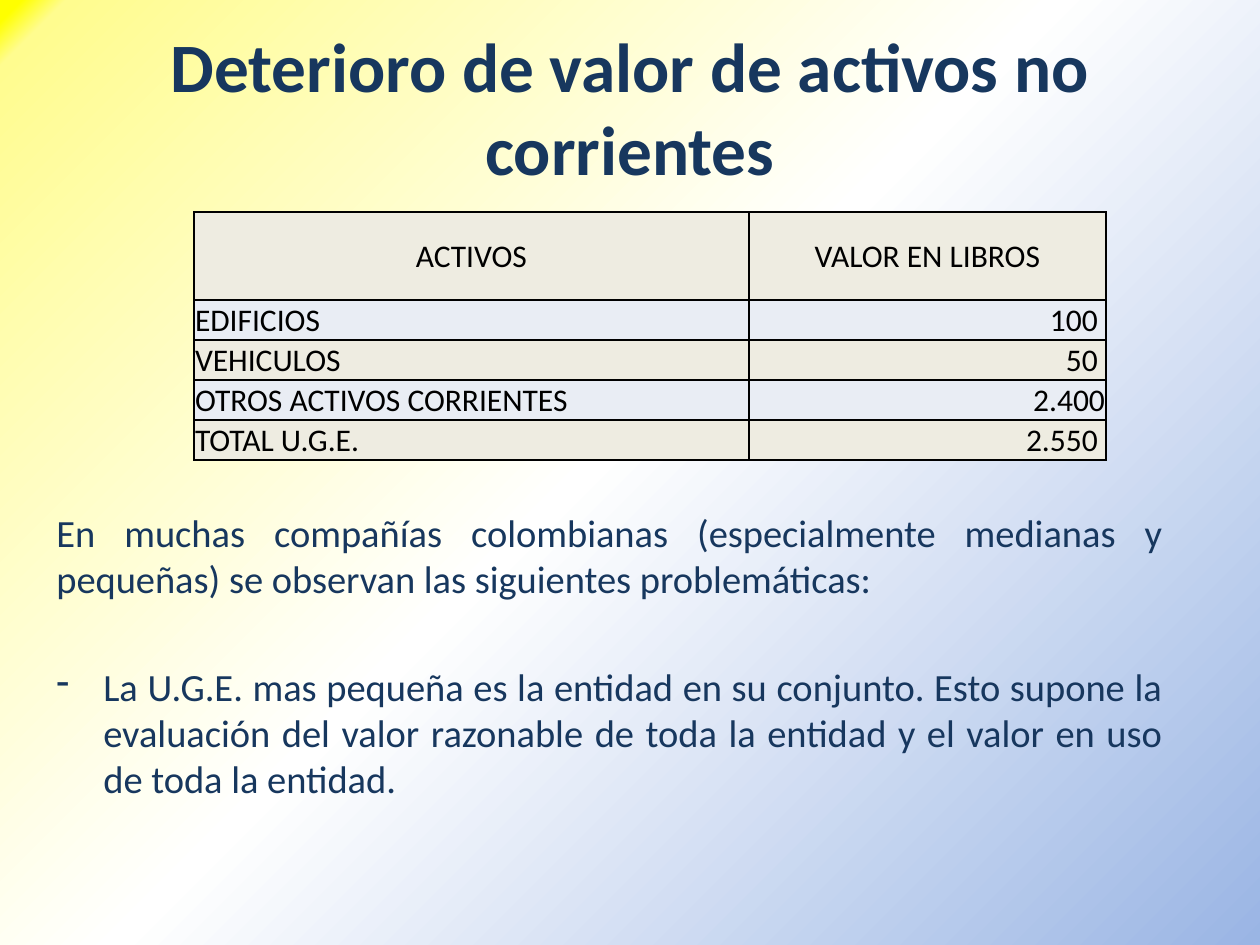
"""Build a slide on impairment of non-current assets: title, book value table and remarks."""
from pptx import Presentation
from pptx.dml.color import RGBColor
from pptx.enum.text import MSO_ANCHOR, PP_ALIGN
from pptx.oxml import parse_xml
from pptx.oxml.ns import nsdecls, qn
from pptx.util import Pt

LEFT, CENTER, RIGHT, JUSTIFY = PP_ALIGN.LEFT, PP_ALIGN.CENTER, PP_ALIGN.RIGHT, PP_ALIGN.JUSTIFY
MIDDLE, BOTTOM = MSO_ANCHOR.MIDDLE, MSO_ANCHOR.BOTTOM
NAVY = RGBColor(0x17, 0x37, 0x5E)
BLACK = RGBColor(0, 0, 0)
SAND = RGBColor(0xEE, 0xEC, 0xE1)
MIST = RGBColor(0xE9, 0xED, 0xF4)
YELLOW = RGBColor(0xFF, 0xFF, 0x00)
CREAM = RGBColor(0xFF, 0xFC, 0x8F)
WHITE = RGBColor(0xFF, 0xFF, 0xFF)
SKY = RGBColor(0x9A, 0xB5, 0xE4)
FONT = "Calibri"


def px(length):
    return round(length * 914400 / 126)


def style(paragraph, size, color, align, bold=False):
    paragraph.alignment = align
    font = paragraph.font
    font.name, font.size, font.bold = FONT, Pt(size), bold
    font.color.rgb = color


prs = Presentation()
prs.slide_width, prs.slide_height = px(1260), px(945)
slide = prs.slides.add_slide(prs.slide_layouts[6])

backdrop = slide.background.fill
backdrop.gradient()
backdrop.gradient_angle = 315
stops = next(slide.element.iter(qn("a:gsLst")))
for stop in list(stops):
    stops.remove(stop)
for percent, color in ((1, YELLOW), (3, CREAM), (48, WHITE), (100, SKY)):
    stops.append(parse_xml(
        f'<a:gs {nsdecls("a")} pos="{percent * 1000}"><a:srgbClr val="{color}"/></a:gs>'))

title = slide.shapes.add_textbox(px(63), px(28), px(1134), px(157)).text_frame
title.word_wrap = True
title.vertical_anchor = MIDDLE
title.text = "Deterioro de valor de activos no corrientes"
style(title.paragraphs[0], 39.6, NAVY, CENTER, bold=True)

assets = (
    ("ACTIVOS", "VALOR EN LIBROS"),
    ("EDIFICIOS", " 100 "),
    ("VEHICULOS", " 50 "),
    ("OTROS ACTIVOS CORRIENTES", "2.400"),
    ("TOTAL U.G.E.", " 2.550 "),
)
book_values = slide.shapes.add_table(
    len(assets), 2, px(194), px(212), px(912), px(248)).table
for column, width in zip(book_values.columns, (555, 357)):
    column.width = px(width)
for r, entries in enumerate(assets):
    header = r == 0
    book_values.rows[r].height = px(88 if header else 40)
    for c, entry in enumerate(entries):
        cell = book_values.cell(r, c)
        cell.text = entry
        cell.margin_left = cell.margin_right = cell.margin_top = px(1)
        cell.margin_bottom = 0
        cell.vertical_anchor = MIDDLE if header else BOTTOM
        style(cell.text_frame.paragraphs[0], 18, BLACK, CENTER if header else (LEFT, RIGHT)[c])
        properties = cell._tc.get_or_add_tcPr()
        for side in ("lnL", "lnR", "lnT", "lnB"):
            properties.append(parse_xml(
                f'<a:{side} {nsdecls("a")} w="{Pt(1)}"><a:solidFill>'
                f'<a:srgbClr val="{BLACK}"/></a:solidFill></a:{side}>'))
        cell.fill.solid()
        cell.fill.fore_color.rgb = MIST if r % 2 else SAND

remarks = slide.shapes.add_textbox(px(44), px(503), px(1131), px(387)).text_frame
remarks.word_wrap = True
intro = remarks.paragraphs[0]
intro.text = ("En muchas compañías colombianas (especialmente medianas y pequeñas) "
              "se observan las siguientes problemáticas:")
problem = remarks.add_paragraph()
problem.text = ("La U.G.E. mas pequeña es la entidad en su conjunto. Esto supone la evaluación "
                "del valor razonable de toda la entidad y el valor en uso de toda la entidad.")
problem.space_before = Pt(35)
bullet = problem._p.get_or_add_pPr()
bullet.set("marL", str(px(47)))
bullet.set("indent", str(-px(47)))
bullet.append(parse_xml(f'<a:buChar {nsdecls("a")} char="-"/>'))
for paragraph in remarks.paragraphs:
    style(paragraph, 22, NAVY, JUSTIFY)

prs.save("out.pptx")
